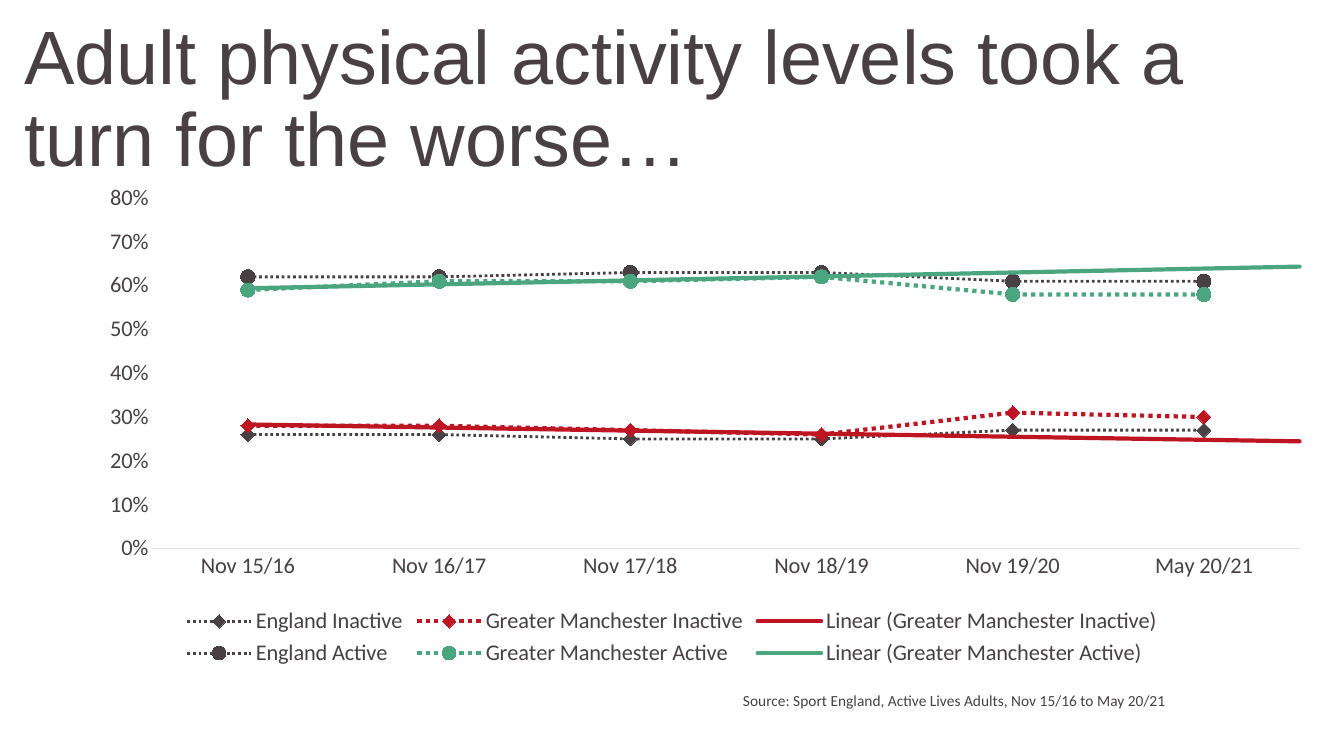
from dataclasses import dataclass

import pptx
import pptx.chart.data
import pptx.dml.color
import pptx.enum.chart
import pptx.enum.dml
import pptx.enum.text
import pptx.oxml
import pptx.oxml.ns
import pptx.util
from pptx.util import Inches

CHARCOAL = pptx.dml.color.RGBColor(0x48, 0x40, 0x43)
RED = pptx.dml.color.RGBColor(0xBD, 0x16, 0x22)
GREEN = pptx.dml.color.RGBColor(0x4B, 0xA5, 0x7E)
PALE_GREY = pptx.dml.color.RGBColor(0xE5, 0xE1, 0xE3)
DIAMOND = pptx.enum.chart.XL_MARKER_STYLE.DIAMOND
CIRCLE = pptx.enum.chart.XL_MARKER_STYLE.CIRCLE

LEFT, WIDTH = 0.14, 13.05
PERIODS = ["Nov 15/16", "Nov 16/17", "Nov 17/18", "Nov 18/19", "Nov 19/20", "May 20/21"]
HIDDEN_LEGEND_ENTRIES = [2, 3, 6, 7, 8, 9]


@dataclass
class ActivitySeries:
    name: str
    values: list[float | None]
    color: pptx.dml.color.RGBColor
    marker: pptx.enum.chart.XL_MARKER_STYLE
    line_width: float
    has_trend: bool = False


LATER = [None] * 3
ACTIVITY = [
    ActivitySeries("England Inactive", [0.26, 0.26, 0.25, 0.25], CHARCOAL, DIAMOND, 2),
    ActivitySeries("Greater Manchester Inactive", [0.28, 0.28, 0.27, 0.26], RED, DIAMOND, 3, True),
    ActivitySeries("Series 3", LATER + [0.25, 0.27, 0.27], CHARCOAL, DIAMOND, 2),
    ActivitySeries("Series 4", LATER + [0.26, 0.31, 0.3], RED, DIAMOND, 3),
    ActivitySeries("England Active", [0.62, 0.62, 0.63, 0.63], CHARCOAL, CIRCLE, 2),
    ActivitySeries("Greater Manchester Active", [0.59, 0.61, 0.61, 0.62], GREEN, CIRCLE, 3, True),
    ActivitySeries("Series 7", LATER + [0.63, 0.61, 0.61], CHARCOAL, CIRCLE, 2),
    ActivitySeries("Series 8", LATER + [0.62, 0.58, 0.58], GREEN, CIRCLE, 3),
]


def chart_xml(xml: str):
    """Parse a chart fragment whose root carries the {ns} marker."""
    return pptx.oxml.parse_xml(xml.replace("{ns}", pptx.oxml.ns.nsdecls("c", "a")))


def set_font(font, name: str, size: float) -> None:
    font.name = name
    font.size = pptx.util.Pt(size)
    font.color.rgb = CHARCOAL


def write_text(shape, text: str, font_name: str, size: float, line_spacing: float) -> None:
    frame = shape.text_frame
    frame.word_wrap = True
    frame.auto_size = pptx.enum.text.MSO_AUTO_SIZE.NONE
    frame.vertical_anchor = pptx.enum.text.MSO_ANCHOR.TOP
    paragraph = frame.paragraphs[0]
    paragraph.text = text
    paragraph.alignment = pptx.enum.text.PP_ALIGN.LEFT
    paragraph.line_spacing = line_spacing
    set_font(paragraph.font, font_name, size)


def add_trend_line(series, color: pptx.dml.color.RGBColor) -> None:
    """Add a linear trend that runs on over the last two periods."""
    trend = chart_xml(
        f'<c:trendline {{ns}}><c:spPr><a:ln w="{pptx.util.Pt(3)}" cap="rnd"><a:solidFill>'
        f'<a:srgbClr val="{color}"/></a:solidFill><a:prstDash val="solid"/></a:ln></c:spPr>'
        '<c:trendlineType val="linear"/><c:forward val="2"/><c:dispRSqr val="0"/>'
        '<c:dispEq val="0"/></c:trendline>'
    )
    series._element.find(pptx.oxml.ns.qn("c:cat")).addprevious(trend)


def style_series(series, activity: ActivitySeries) -> None:
    series.smooth = False
    line = series.format.line
    line.color.rgb = activity.color
    line.width = pptx.util.Pt(activity.line_width)
    line.dash_style = pptx.enum.dml.MSO_LINE.ROUND_DOT
    marker = series.marker
    marker.style = activity.marker
    marker.size = 10
    marker.format.fill.solid()
    marker.format.fill.fore_color.rgb = activity.color
    marker.format.line.color.rgb = activity.color
    if activity.has_trend:
        add_trend_line(series, activity.color)


def style_axes(chart) -> None:
    for axis in (chart.category_axis, chart.value_axis):
        axis.has_major_gridlines = False
        axis.major_tick_mark = pptx.enum.chart.XL_TICK_MARK.NONE
        axis.minor_tick_mark = pptx.enum.chart.XL_TICK_MARK.NONE
        set_font(axis.tick_labels.font, "Calibri", 16)
    chart.category_axis.format.line.color.rgb = PALE_GREY
    chart.category_axis.format.line.width = pptx.util.Pt(0.75)
    value_axis = chart.value_axis
    value_axis.minimum_scale, value_axis.maximum_scale = 0, 0.8
    value_axis.major_unit = 0.1
    value_axis.tick_labels.number_format = "0%"
    value_axis.tick_labels.number_format_is_linked = False
    value_axis.format.line.fill.background()


def place_plot_area(chart, left: float, top: float, width: float, height: float) -> None:
    """Fix the inner plot area, in fractions of the chart."""
    plot_area = chart.element.find(".//" + pptx.oxml.ns.qn("c:plotArea"))
    for layout in plot_area.findall(pptx.oxml.ns.qn("c:layout")):
        plot_area.remove(layout)
    sizes = {"x": left, "y": top, "w": width, "h": height}
    plot_area.insert(0, chart_xml(
        '<c:layout {ns}><c:manualLayout><c:layoutTarget val="inner"/>'
        '<c:xMode val="edge"/><c:yMode val="edge"/>'
        + "".join(f'<c:{key} val="{value}"/>' for key, value in sizes.items())
        + "</c:manualLayout></c:layout>"
    ))


def add_legend(chart) -> None:
    chart.has_legend = True
    legend = chart.legend
    legend.position = pptx.enum.chart.XL_LEGEND_POSITION.BOTTOM
    legend.include_in_layout = False
    set_font(legend.font, "Calibri", 16)
    position = legend._element.find(pptx.oxml.ns.qn("c:legendPos"))
    for index in reversed(HIDDEN_LEGEND_ENTRIES):
        position.addnext(chart_xml(
            f'<c:legendEntry {{ns}}><c:idx val="{index}"/><c:delete val="1"/></c:legendEntry>'
        ))


def add_activity_chart(slide) -> None:
    data = pptx.chart.data.CategoryChartData(number_format="0%")
    data.categories = PERIODS
    for activity in ACTIVITY:
        data.add_series(activity.name, activity.values)
    chart = slide.shapes.add_chart(
        pptx.enum.chart.XL_CHART_TYPE.LINE_MARKERS,
        Inches(LEFT), Inches(1.15), Inches(WIDTH), Inches(5.51), data,
    ).chart
    chart.has_title = False
    set_font(chart.font, "Calibri", 16)
    chart.plots[0].vary_by_categories = False
    for series, activity in zip(chart.plots[0].series, ACTIVITY):
        style_series(series, activity)
    style_axes(chart)
    add_legend(chart)
    place_plot_area(chart, 0.105, 0.148, 0.872, 0.631)


def main() -> None:
    presentation = pptx.Presentation()
    presentation.slide_width = Inches(13.33)
    presentation.slide_height = Inches(7.5)
    slide = presentation.slides.add_slide(presentation.slide_layouts[5])

    title = slide.shapes.title
    title.left, title.top = Inches(LEFT), Inches(0.14)
    title.width, title.height = Inches(WIDTH), Inches(0.79)
    write_text(title, "Adult physical activity levels took a turn for the worse…", "Arial", 54, 0.9)

    add_activity_chart(slide)

    source = slide.shapes.add_textbox(Inches(7.27), Inches(6.84), Inches(5.92), Inches(0.25))
    write_text(
        source, "Source: Sport England, Active Lives Adults, Nov 15/16 to May 20/21", "Calibri", 11, 0.8
    )
    presentation.save("out.pptx")


if __name__ == "__main__":
    main()
